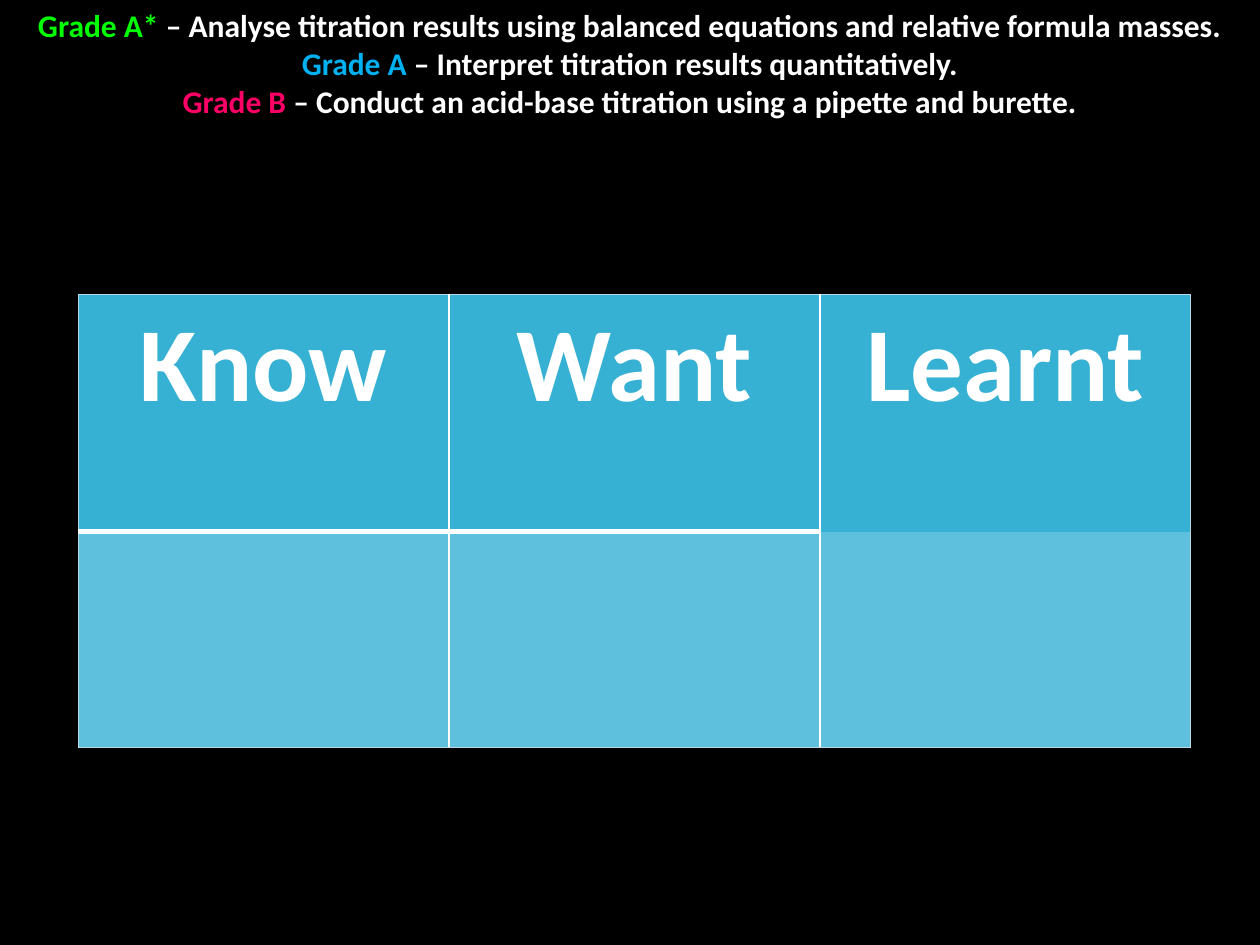
from lxml import etree
from pptx import Presentation
from pptx.dml.color import RGBColor
from pptx.enum.text import PP_ALIGN
from pptx.oxml.ns import qn
from pptx.util import Inches, Pt

CENTER = PP_ALIGN.CENTER
BLANK_LAYOUT = 6
WHITE = "FFFFFF"
HEADER_FILL, BODY_FILL = "36B0D3", "5EC0DC"
OUTER, INNER, DIVIDER = ("BCD7E1", 0.75), (WHITE, 1), (WHITE, 3)

OBJECTIVES = [
    ("Grade A* ", "00FF00", "– Analyse titration results using balanced equations and relative formula masses."),
    ("Grade A ", "00B0F0", "– Interpret titration results quantitatively."),
    ("Grade B ", "FF0066", "– Conduct an acid-base titration using a pipette and burette."),
]
HEADINGS = ["Know", "Want", "Learnt"]
ROW_HEIGHTS = [1.88, 1.71]


def rgb(value):
    return RGBColor.from_string(value)


def add_run(paragraph, text, size, color):
    font_format = {"name": "Calibri", "size": Pt(size), "bold": True}
    run = paragraph.add_run()
    run.text = text
    for attribute, value in font_format.items():
        setattr(run.font, attribute, value)
    run.font.color.rgb = rgb(color)


def set_borders(cell, borders):
    """Draw (colour, points) borders given in L, R, T, B order; None hides one."""
    properties = cell._tc.get_or_add_tcPr()
    for position, (side, border) in enumerate(borders.items()):
        line = etree.Element(qn(f"a:ln{side}"))
        if border:
            color, width = border
            line.set("w", str(Pt(width)))
            fill = etree.SubElement(line, qn("a:solidFill"))
            etree.SubElement(fill, qn("a:srgbClr"), val=color)
        else:
            etree.SubElement(line, qn("a:noFill"))
        properties.insert(position, line)


def add_objectives(slide, left, top, width, height):
    box = slide.shapes.add_textbox(Inches(left), Inches(top), Inches(width), Inches(height))
    frame = box.text_frame
    frame.word_wrap = True
    for index, (grade, color, objective) in enumerate(OBJECTIVES):
        paragraph = frame.add_paragraph() if index else frame.paragraphs[0]
        paragraph.alignment = CENTER
        add_run(paragraph, grade, 18, color)
        add_run(paragraph, objective, 18, WHITE)


def add_kwl_table(slide, left, top, width):
    last = len(HEADINGS) - 1
    table = slide.shapes.add_table(
        len(ROW_HEIGHTS), len(HEADINGS), Inches(left), Inches(top),
        Inches(width), Inches(sum(ROW_HEIGHTS))).table
    table.horz_banding = False
    table.first_row = False
    for row, height in zip(table.rows, ROW_HEIGHTS):
        row.height = Inches(height)

    for column, heading in enumerate(HEADINGS):
        header, body = table.cell(0, column), table.cell(1, column)
        paragraph = header.text_frame.paragraphs[0]
        paragraph.alignment = CENTER
        add_run(paragraph, heading, 60, WHITE)

        sides = {"L": INNER if column else OUTER,
                 "R": INNER if column < last else OUTER}
        divider = DIVIDER if column < last else None
        for cell, fill, edges in (
                (header, HEADER_FILL, {"T": OUTER, "B": divider}),
                (body, BODY_FILL, {"T": divider, "B": OUTER})):
            cell.fill.solid()
            cell.fill.fore_color.rgb = rgb(fill)
            set_borders(cell, sides | edges)


def main():
    presentation = Presentation()
    presentation.slide_width = Inches(10)
    presentation.slide_height = Inches(7.5)
    slide = presentation.slides.add_slide(presentation.slide_layouts[BLANK_LAYOUT])
    slide.background.fill.solid()
    slide.background.fill.fore_color.rgb = rgb("000000")
    add_objectives(slide, 0, 0, 10, 1.01)
    add_kwl_table(slide, 0.62, 2.34, 8.83)
    presentation.save("out.pptx")


if __name__ == "__main__":
    main()
